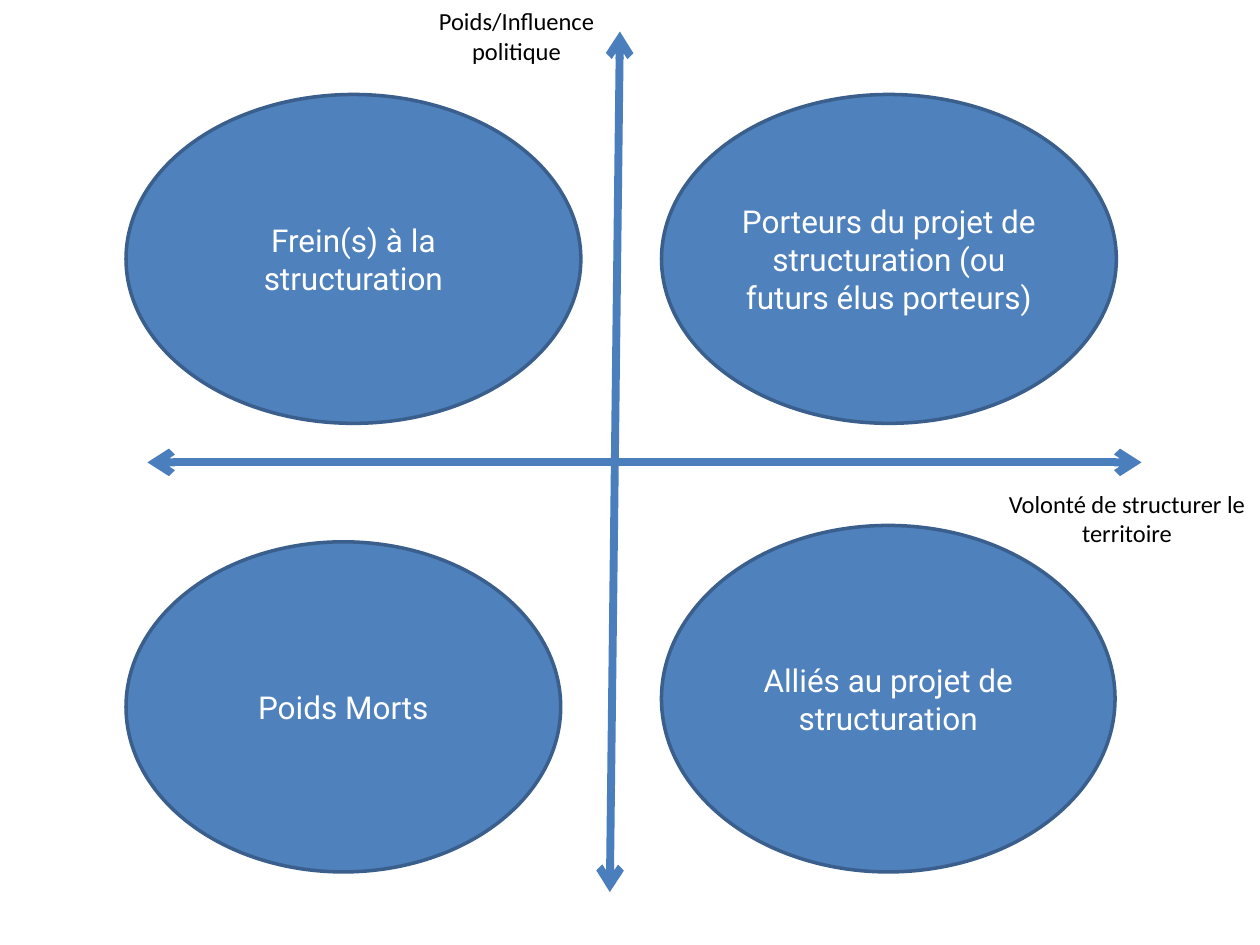
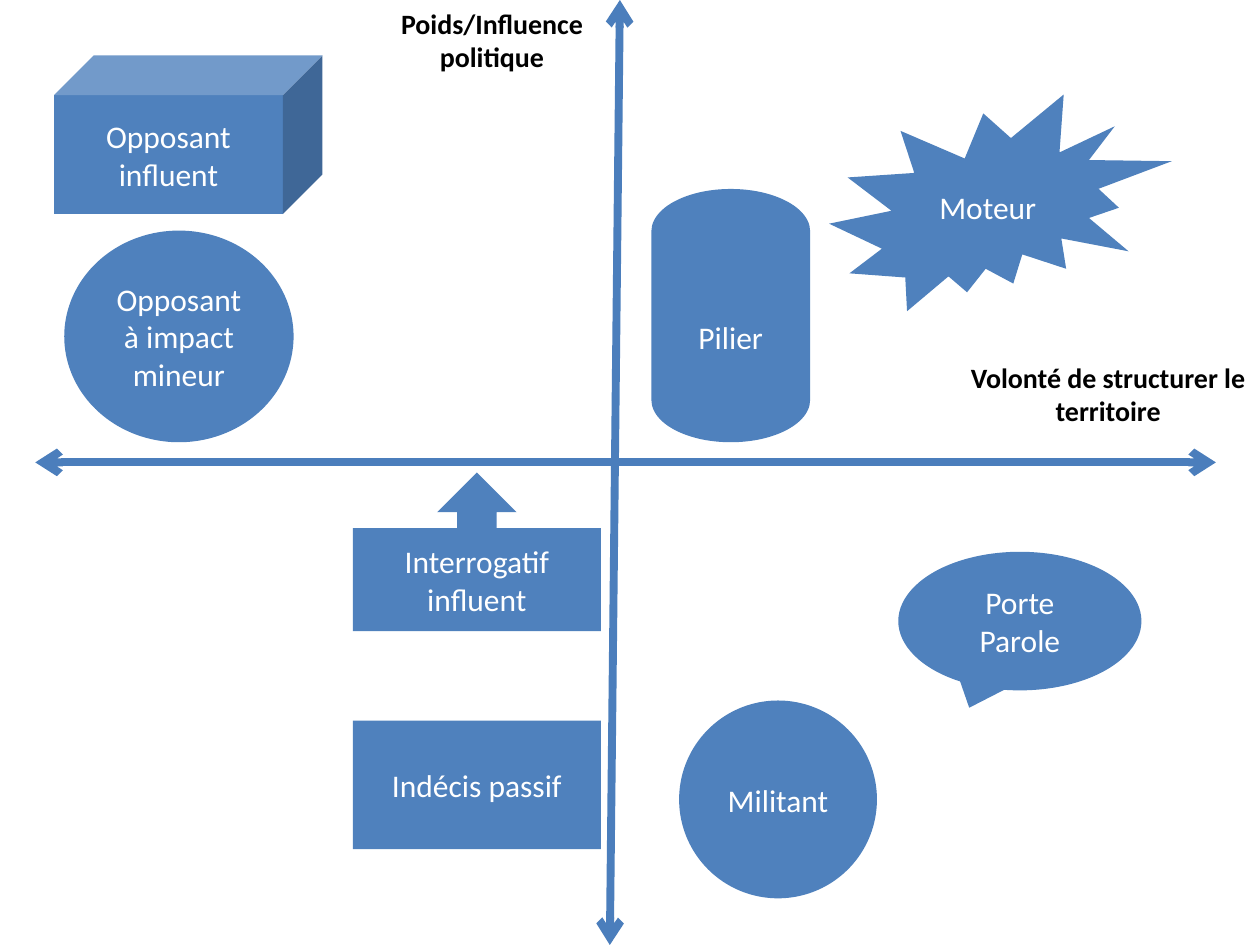
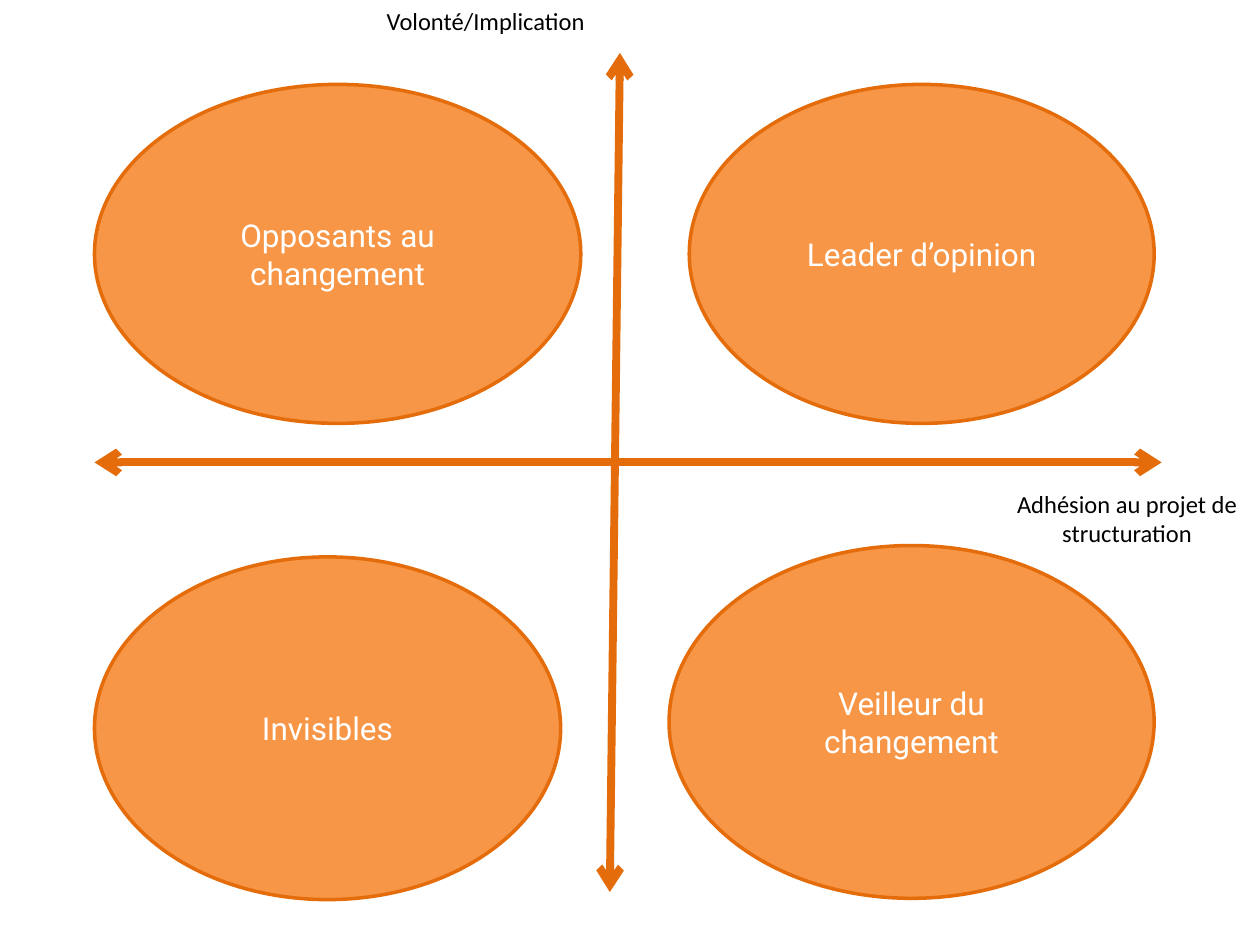
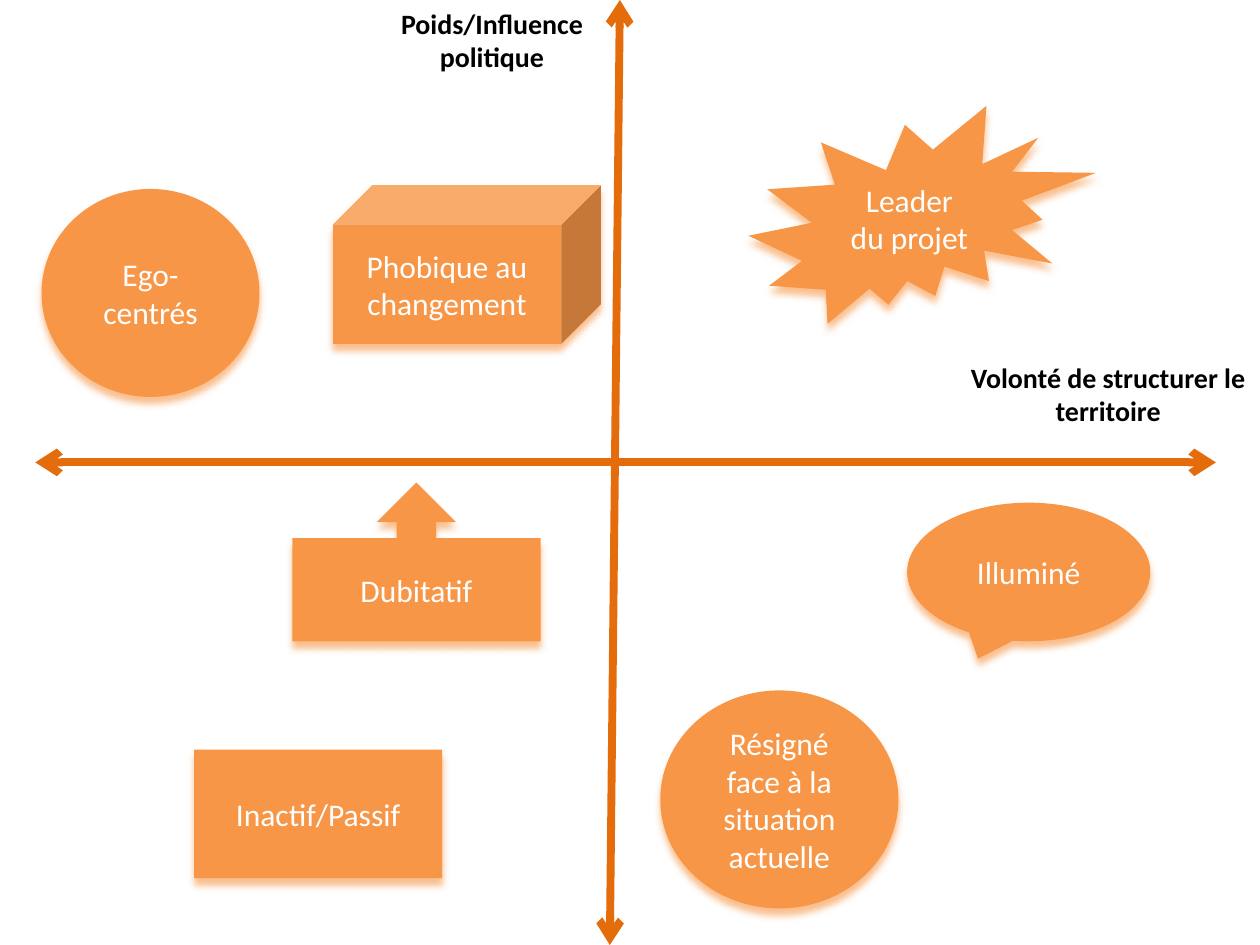
from dataclasses import dataclass

from lxml.etree import SubElement
from pptx import Presentation
from pptx.dml.color import RGBColor
from pptx.enum.shapes import MSO_CONNECTOR, MSO_SHAPE
from pptx.enum.text import MSO_ANCHOR, MSO_AUTO_SIZE, PP_ALIGN
from pptx.oxml.ns import qn
from pptx.util import Emu, Inches, Pt

COLORS = {
    "text": "000000", "on_fill": "FFFFFF", "glow": "FAC090",
    "blue": "4F81BD", "blue_axis": "4B7EBC", "blue_edge": "3A5F8C",
    "orange": "F79646", "orange_axis": "E46C0A", "orange_edge": "E46C0A",
}
COLUMNS, ROWS = 100, 75           # grid laid over every map
AXIS_COLUMN, AXIS_ROW = 48.8, 36.7  # where the axes cross
AXIS_LEAN = 0.4                   # the upright axis leans to the right
BODY_FONT, GROUP_FONT = "Calibri", "Roboto"


@dataclass
class Box:
    left: int
    top: int
    width: int
    height: int

    def point(self, column, row):
        return (Emu(round(self.left + self.width * column / COLUMNS)),
                Emu(round(self.top + self.height * row / ROWS)))

    def cells(self, column, row, columns, rows):
        """Left, top, width and height of a block of grid cells."""
        return (*self.point(column, row),
                Emu(round(self.width * columns / COLUMNS)),
                Emu(round(self.height * rows / ROWS)))


def rgb(name):
    return RGBColor.from_string(COLORS[name])


def write(frame, text, size, color, font=BODY_FONT, bold=False):
    frame.word_wrap = True
    paragraph = frame.paragraphs[0]
    paragraph.alignment = PP_ALIGN.CENTER
    run = paragraph.add_run()
    run.text = text
    run.font.name, run.font.size, run.font.bold = font, Pt(size), bold
    run.font.color.rgb = rgb(color)


def draw_axis(slide, start, end, color):
    axis = slide.shapes.add_connector(MSO_CONNECTOR.STRAIGHT, *start, *end)
    axis.line.width = Pt(4.5)
    axis.line.color.rgb = rgb(color)
    properties = axis.line.color and axis._element.spPr
    outline = properties.find(qn("a:ln"))
    for arrowhead in ("a:headEnd", "a:tailEnd"):
        SubElement(outline, qn(arrowhead), type="arrow")
    SubElement(properties, qn("a:effectLst"))


def draw_axes(slide, area, hue, reach):
    """Both axes; reach gives their left, right, top and bottom ends."""
    left, right, top, bottom = reach
    color = f"{hue}_axis"
    draw_axis(slide, area.point(left, AXIS_ROW),
              area.point(right, AXIS_ROW), color)
    draw_axis(slide, area.point(AXIS_COLUMN + AXIS_LEAN, top),
              area.point(AXIS_COLUMN - AXIS_LEAN, bottom), color)


def draw_axis_labels(slide, area, labels, size, bold):
    for text, cells in labels:
        label = slide.shapes.add_textbox(*area.cells(*cells))
        write(label.text_frame, text, size, "text", bold=bold)
        label.text_frame.auto_size = MSO_AUTO_SIZE.SHAPE_TO_FIT_TEXT


def draw_actor(slide, area, hue, outline, text, cells, font, edged, glow):
    actor = slide.shapes.add_shape(outline, *area.cells(*cells))
    actor.fill.solid()
    actor.fill.fore_color.rgb = rgb(hue)
    if edged:
        actor.line.color.rgb = rgb(f"{hue}_edge")
        actor.line.width = Pt(2)
    else:
        actor.line.fill.background()
    actor.shadow.inherit = False
    if glow:
        effects = actor._element.spPr.find(qn("a:effectLst"))
        shadow = SubElement(effects, qn("a:outerShdw"), blurRad=str(Pt(4)),
                            dist=str(Pt(4)), dir="5400000", rotWithShape="0")
        SubElement(shadow, qn("a:srgbClr"), val=COLORS["glow"])
    actor.text_frame.vertical_anchor = MSO_ANCHOR.MIDDLE
    write(actor.text_frame, text, 18, "on_fill", font)


def group_map(slide, area, hue, reach, labels, groups):
    """Four large ovals, one in each quadrant."""
    draw_axes(slide, area, hue, reach)
    draw_axis_labels(slide, area, labels, 14, False)
    for text, cells in groups:
        draw_actor(slide, area, hue, MSO_SHAPE.OVAL, text, cells,
                   GROUP_FONT, edged=True, glow=False)


def profile_map(slide, area, hue, profiles, glow):
    """Individual profiles, each with a telling outline."""
    draw_axes(slide, area, hue, (2.8, 96.5, 0, 75))
    draw_axis_labels(slide, area, [
        ("Poids/Influence politique", (30.5, 0, 17.1, 6.4)),
        ("Volonté de structurer le territoire", (75.9, 28.1, 24.1, 6.4)),
    ], 16, True)
    for outline, text, cells in profiles:
        draw_actor(slide, area, hue, outline, text, cells,
                   BODY_FONT, edged=False, glow=glow)


# Content: cells are column, row, columns, rows
SIDE_LABEL = (78.9, 38.3, 21.1, 5.7)
POLITICAL_LABELS = [
    ("Poids/Influence politique", (33.5, 0, 15, 5.7)),
    ("Volonté de structurer le territoire", SIDE_LABEL),
]
POLITICAL_GROUPS = [
    ("Porteurs du projet de structuration (ou futurs élus porteurs)",
     (52.5, 7.5, 36.1, 26.1)),
    ("Alliés au projet de structuration", (52.5, 41.7, 36, 27.5)),
    ("Frein(s) à la structuration", (10, 7.5, 36.1, 26.1)),
    ("Poids Morts", (10, 43, 34.5, 26.2)),
]
POLITICAL_PROFILES = [
    (MSO_SHAPE.EXPLOSION2, "Moteur", (65.8, 7.5, 27.2, 17.2)),
    (MSO_SHAPE.OVAL_CALLOUT, "Porte Parole", (71.3, 43.8, 19.3, 11)),
    (MSO_SHAPE.OVAL, "Militant", (53.9, 55.6, 15.7, 15.7)),
    (MSO_SHAPE.FLOWCHART_MAGNETIC_DISK, "Pilier", (51.7, 15, 12.6, 20.1)),
    (MSO_SHAPE.FLOWCHART_SUMMING_JUNCTION, "Opposant à impact mineur",
     (5.1, 18.3, 18.2, 16.8)),
    (MSO_SHAPE.CUBE, "Opposant influent", (4.3, 4.4, 21.3, 12.6)),
    (MSO_SHAPE.UP_ARROW_CALLOUT, "Interrogatif influent",
     (28, 37.5, 19.7, 12.6)),
    (MSO_SHAPE.RECTANGLE, "Indécis passif", (28, 57.2, 19.7, 10.2)),
]
CHANGE_LABELS = [
    ("Volonté/Implication", (28.7, 0, 19.7, 3.4)),
    ("Adhésion au projet de structuration", SIDE_LABEL),
]
CHANGE_GROUPS = [
    ("Leader d’opinion", (54.7, 6.7, 36.9, 26.9)),
    ("Veilleur du changement", (53.1, 43.3, 38.5, 28)),
    ("Opposants au changement", (7.5, 6.7, 38.6, 26.9)),
    ("Invisibles", (7.5, 44.2, 37, 27.2)),
]
CHANGE_PROFILES = [
    (MSO_SHAPE.EXPLOSION2, "Leader du projet", (59.4, 8.4, 27.6, 17.3)),
    (MSO_SHAPE.OVAL_CALLOUT, "Illuminé", (72, 39.9, 19.3, 11)),
    (MSO_SHAPE.OVAL, "Résigné face à la situation actuelle",
     (52.4, 54.8, 18.9, 17.3)),
    (MSO_SHAPE.FLOWCHART_SUMMING_JUNCTION, "Ego-centrés",
     (3.3, 15, 17.3, 16.5)),
    (MSO_SHAPE.CUBE, "Phobique au changement", (26.4, 14.7, 21.3, 12.6)),
    (MSO_SHAPE.UP_ARROW_CALLOUT, "Dubitatif", (23.2, 38.3, 19.7, 12.6)),
    (MSO_SHAPE.RECTANGLE, "Inactif/Passif", (15.4, 59.5, 19.7, 10.2)),
]


def main():
    deck = Presentation()
    deck.slide_width, deck.slide_height = Inches(10), Inches(7.5)
    area = Box(0, 0, deck.slide_width, deck.slide_height)
    blank = deck.slide_layouts[6]

    def new_slide():
        return deck.slides.add_slide(blank)

    group_map(new_slide(), area, "blue", (11.7, 90.6, 2.5, 70.8),
              POLITICAL_LABELS, POLITICAL_GROUPS)
    profile_map(new_slide(), area, "blue", POLITICAL_PROFILES, glow=False)
    group_map(new_slide(), area, "orange", (7.5, 92.2, 4.2, 70.8),
              CHANGE_LABELS, CHANGE_GROUPS)
    profile_map(new_slide(), area, "orange", CHANGE_PROFILES, glow=True)
    deck.save("out.pptx")


if __name__ == "__main__":
    main()
